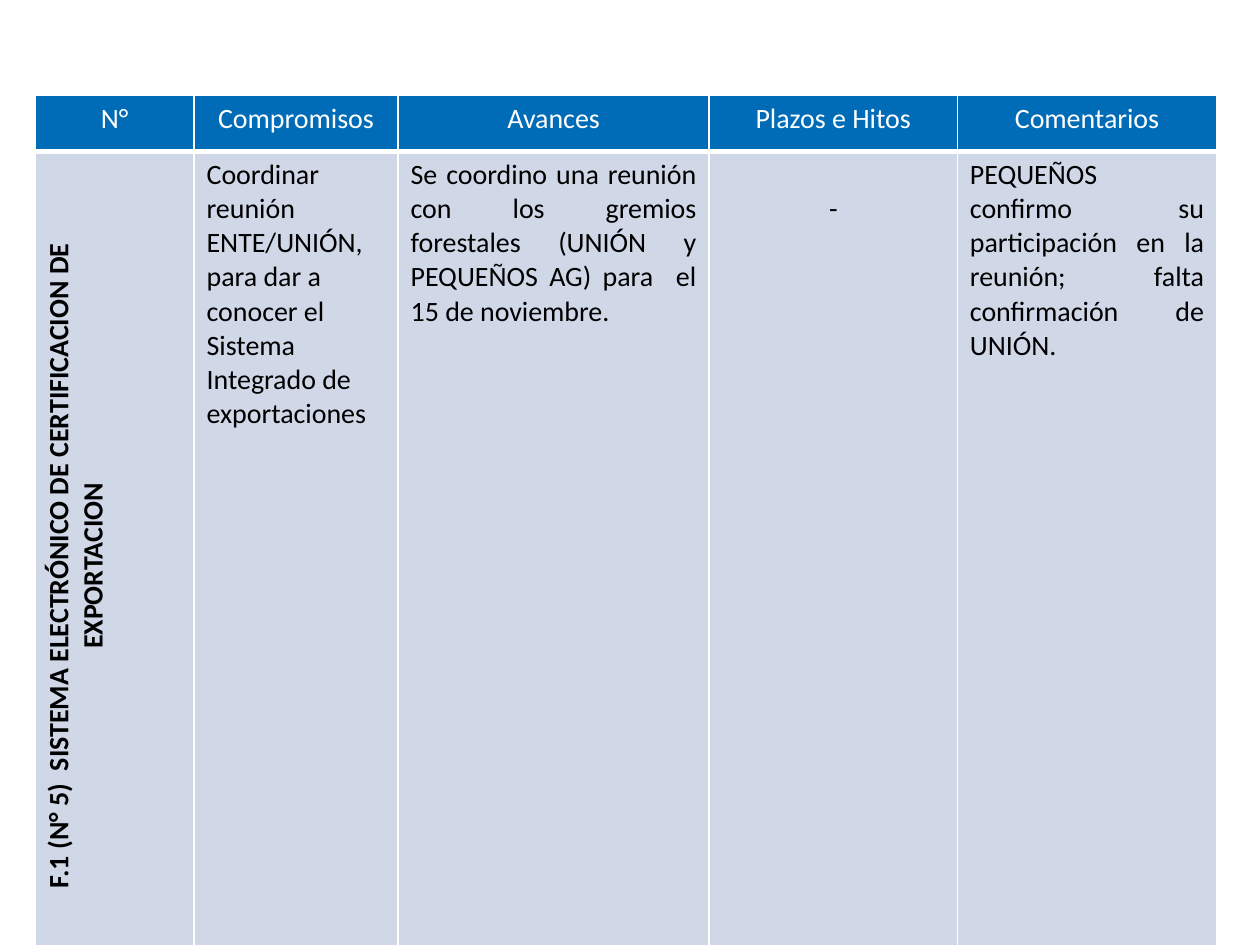
from dataclasses import dataclass

from lxml import etree
from pptx import Presentation
from pptx.dml.color import RGBColor
from pptx.enum.text import PP_ALIGN
from pptx.oxml.ns import qn
from pptx.util import Pt

LEFT, MID, JUST = PP_ALIGN.LEFT, PP_ALIGN.CENTER, PP_ALIGN.JUSTIFY


@dataclass(frozen=True)
class Theme:
    font: str = "Calibri"
    size: int = 16
    head: str = "006CB7"
    body: str = "D0D8E8"
    light: str = "FFFFFF"
    dark: str = "000000"


@dataclass(frozen=True)
class Entry:
    text: str
    align: PP_ALIGN = MID
    bold: bool = False
    turned: bool = False
    top: float = 3.6


THEME = Theme()
WIDTHS = (90.7, 116.6, 177.8, 141.8, 148.3)
HEIGHTS = (31.7, 100)

HEADS = [Entry(name) for name in
         ("N°", "Compromisos", "Avances", "Plazos e Hitos", "Comentarios")]
BODY = [
    Entry("F.1 (N° 5)  SISTEMA ELECTRÓNICO DE CERTIFICACION DE EXPORTACION",
          bold=True, turned=True),
    Entry("Coordinar reunión ENTE/UNIÓN, para dar a conocer el Sistema "
          "Integrado de exportaciones", LEFT),
    Entry("Se coordino una reunión con los gremios forestales (UNIÓN y "
          "PEQUEÑOS AG) para  el 15 de noviembre.", JUST),
    Entry("-", top=23.1),
    Entry("PEQUEÑOS confirmo su participación en la reunión; falta "
          "confirmación de UNIÓN.", JUST),
]


def add_edges(cell, base: float) -> None:
    """Draw the four cell borders; base is the width of the lower one."""
    props = cell._tc.get_or_add_tcPr()
    sides = (("lnL", 1), ("lnR", 1), ("lnT", 1), ("lnB", base))
    for spot, (tag, width) in enumerate(sides):
        line = etree.Element(qn(f"a:{tag}"), w=str(Pt(width)))
        fill = etree.SubElement(line, qn("a:solidFill"))
        etree.SubElement(fill, qn("a:srgbClr"), val=THEME.light)
        props.insert(spot, line)


def fill_cell(cell, entry: Entry, fill: str, ink: str, base: float) -> None:
    cell.text = entry.text
    cell.margin_top = Pt(entry.top)
    cell.fill.solid()
    cell.fill.fore_color.rgb = RGBColor.from_string(fill)
    para = cell.text_frame.paragraphs[0]
    para.alignment = entry.align
    font = para.font
    font.name, font.size, font.bold = THEME.font, Pt(THEME.size), entry.bold
    font.color.rgb = RGBColor.from_string(ink)
    add_edges(cell, base)
    if entry.turned:
        cell._tc.get_or_add_tcPr().set("vert", "vert270")


def main() -> None:
    deck = Presentation()
    deck.slide_width, deck.slide_height = Pt(720), Pt(540)
    slide = deck.slides.add_slide(deck.slide_layouts[6])
    table = slide.shapes.add_table(
        2, len(WIDTHS), Pt(20.2), Pt(54.7), Pt(sum(WIDTHS)), Pt(sum(HEIGHTS))
    ).table
    for col, width in zip(table.columns, WIDTHS):
        col.width = Pt(width)
    for row, height in zip(table.rows, HEIGHTS):
        row.height = Pt(height)

    looks = ((HEADS, THEME.head, THEME.light, 3),
             (BODY, THEME.body, THEME.dark, 1))
    for row, (entries, fill, ink, base) in zip(table.rows, looks):
        for cell, entry in zip(row.cells, entries):
            fill_cell(cell, entry, fill, ink, base)
    deck.save("out.pptx")


if __name__ == "__main__":
    main()
